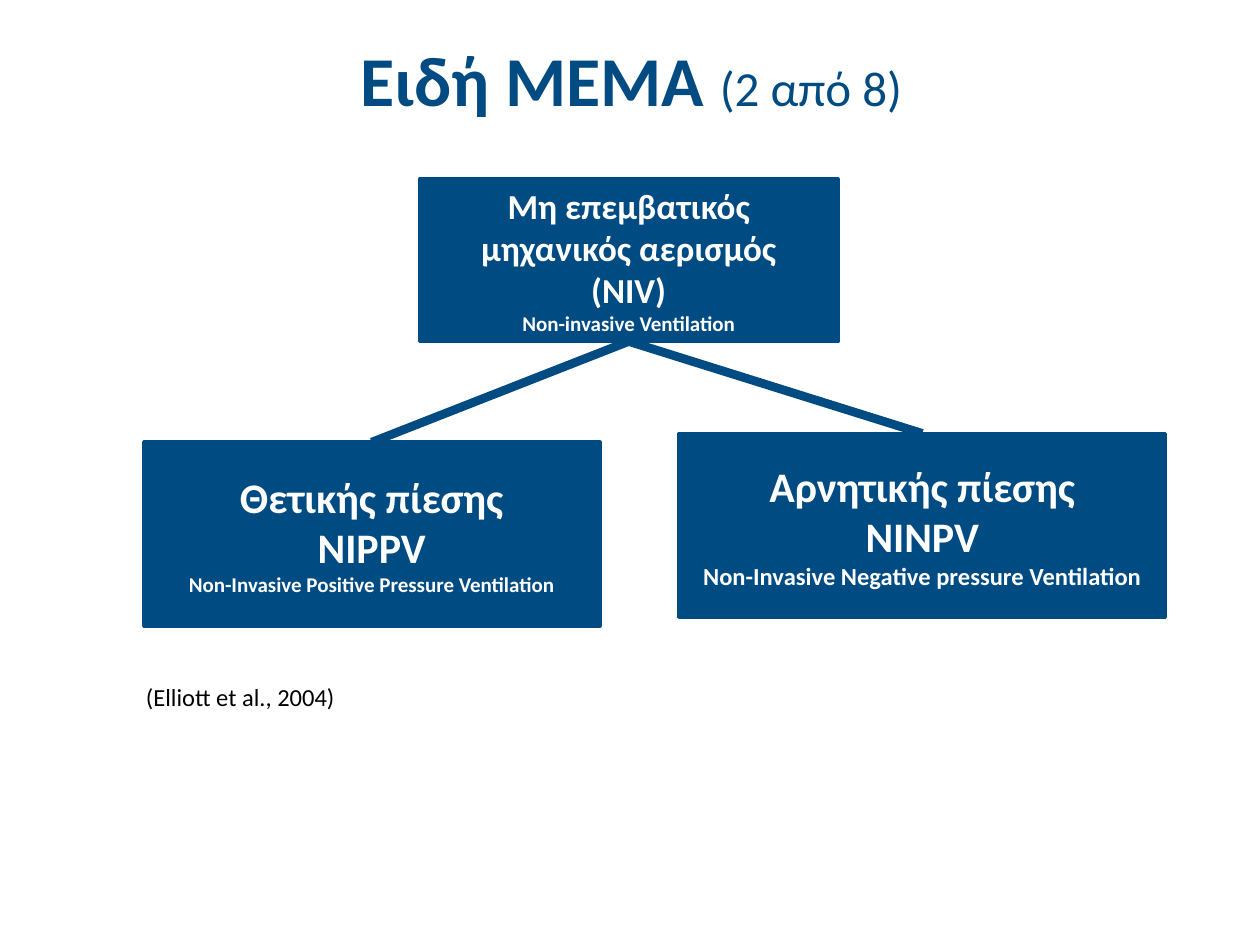
from pptx import Presentation
from pptx.dml.color import RGBColor
from pptx.enum import shapes, text
from pptx.oxml.ns import qn
from pptx.util import Inches, Pt

BLUE = RGBColor(0x00, 0x4B, 0x82)
WHITE = RGBColor(0xFF, 0xFF, 0xFF)
BLACK = RGBColor(0x00, 0x00, 0x00)
FONT = "Calibri"
TOP_SITE, BOTTOM_SITE = 0, 2


def add_span(para, words, size, color, bold=False):
    span = para.add_run()
    span.text = words
    span.font.name = FONT
    span.font.size = Pt(size)
    span.font.bold = bold
    span.font.color.rgb = color


def add_text_box(page, left, top, width, height):
    box = page.shapes.add_textbox(Inches(left), Inches(top), Inches(width), Inches(height))
    box.text_frame.word_wrap = True
    return box.text_frame


def add_node(page, left, top, width, height, lines):
    """Draw a filled box; lines holds (words, size) pairs, one per paragraph."""
    box = page.shapes.add_shape(
        shapes.MSO_SHAPE.RECTANGLE, Inches(left), Inches(top), Inches(width), Inches(height))
    box.shadow.inherit = False
    box.fill.solid()
    box.fill.fore_color.rgb = BLUE
    box.line.color.rgb = BLUE
    box.line.width = Pt(2)
    frame = box.text_frame
    frame.word_wrap = True
    frame.vertical_anchor = text.MSO_ANCHOR.MIDDLE
    for index, (words, size) in enumerate(lines):
        para = frame.add_paragraph() if index else frame.paragraphs[0]
        para.alignment = text.PP_ALIGN.CENTER
        add_span(para, words, size, WHITE, bold=True)
    return box


def add_branch(page, parent, child):
    branch = page.shapes.add_connector(shapes.MSO_CONNECTOR.STRAIGHT, 0, 0, 0, 0)
    branch.begin_connect(parent, BOTTOM_SITE)
    branch.end_connect(child, TOP_SITE)
    branch.line.color.rgb = BLUE
    branch.line.width = Pt(5)
    properties = branch.element.spPr
    properties.append(properties.makeelement(qn("a:effectLst"), {}))


def add_title(page):
    frame = add_text_box(page, 0.51, 0.13, 9, 0.99)
    frame.vertical_anchor = text.MSO_ANCHOR.MIDDLE
    para = frame.paragraphs[0]
    para.alignment = text.PP_ALIGN.CENTER
    add_span(para, "Ειδή ΜΕΜΑ ", 40, BLUE, bold=True)
    add_span(para, "(2 από 8)", 28, BLUE)


def add_citation(page):
    para = add_text_box(page, 1.06, 5.42, 3.38, 0.54).paragraphs[0]
    para.line_spacing = 0.73
    para.space_before = Pt(2.8)
    # Hanging indent
    indent = Inches(0.38)
    properties = para._p.get_or_add_pPr()
    properties.set("marL", str(indent))
    properties.set("indent", str(-indent))
    add_span(para, "(Elliott et al., 2004)", 14, BLACK)


def main():
    deck = Presentation()
    deck.slide_width, deck.slide_height = Inches(10), Inches(7.5)
    page = deck.slides.add_slide(deck.slide_layouts[6])

    # Tree of ventilation types
    root = add_node(page, 3.33, 1.42, 3.32, 1.29, [
        ("Μη επεμβατικός μηχανικός αερισμός", 20),
        ("(NIV)", 20),
        ("Non-invasive Ventilation", 12)])
    positive = add_node(page, 1.14, 3.51, 3.62, 1.46, [
        ("Θετικής πίεσης", 24),
        ("NΙPPV", 24),
        ("Non-Invasive Positive Pressure Ventilation", 12)])
    negative = add_node(page, 5.39, 3.44, 3.86, 1.46, [
        ("Αρνητικής πίεσης", 24),
        ("NΙNPV", 24),
        ("Non-Invasive Negative pressure Ventilation", 14)])
    for child in (positive, negative):
        add_branch(page, root, child)

    # Citation and title
    add_citation(page)
    add_title(page)
    deck.save("out.pptx")


if __name__ == "__main__":
    main()
